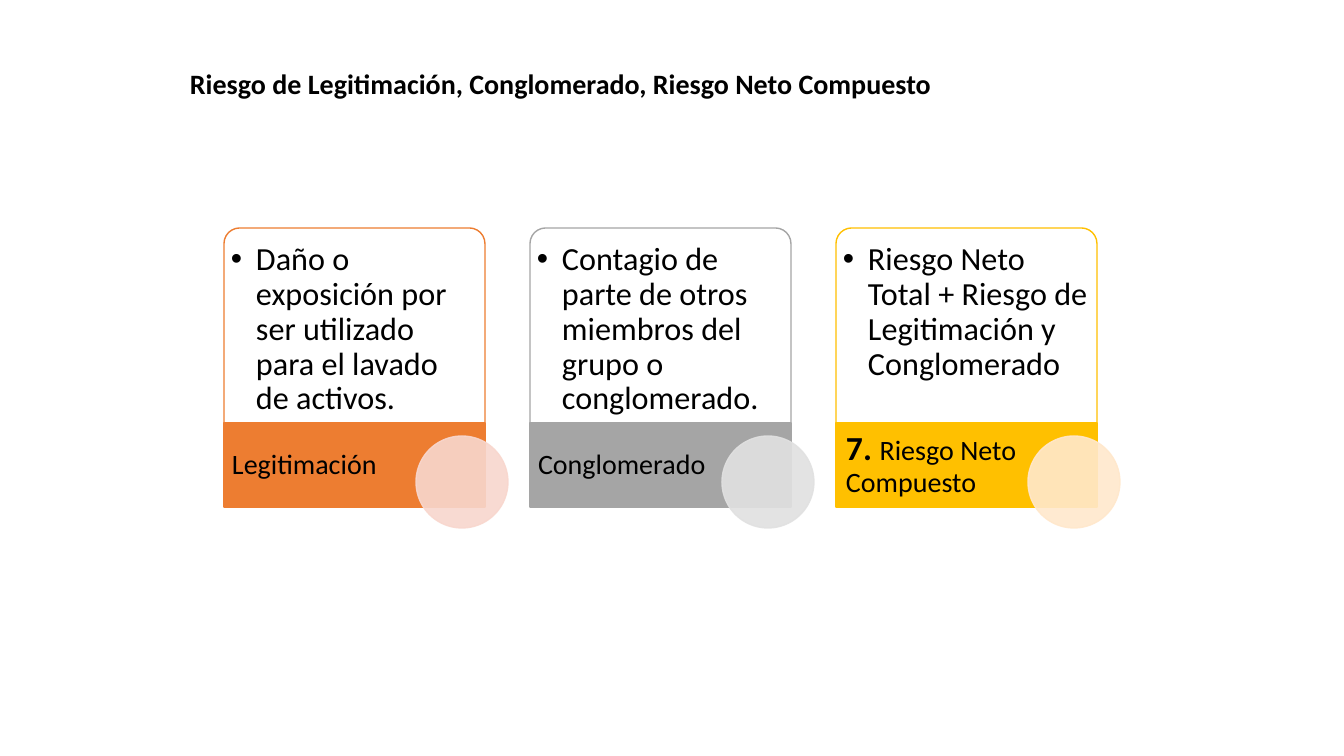
import pptx
import pptx.util
import pptx.dml.color
import pptx.enum.shapes
import pptx.enum.text
import pptx.oxml.ns
import lxml.etree

EMU_PER_PX = 914400 / 100.8
SHAPE = pptx.enum.shapes.MSO_SHAPE
ANCHOR = pptx.enum.text.MSO_ANCHOR
BLACK = "000000"


def px(n):
    return pptx.util.Emu(round(n * EMU_PER_PX))


def color(value):
    return pptx.dml.color.RGBColor.from_string(value)


def add_xml(parent, tag, **attrs):
    return lxml.etree.SubElement(parent, pptx.oxml.ns.qn(tag), **attrs)


def paint(fill, value, alpha=100):
    fill.solid()
    fill.fore_color.rgb = color(value)
    if alpha < 100:
        clr = fill._xPr.find(".//" + pptx.oxml.ns.qn("a:srgbClr"))
        add_xml(clr, "a:alpha", val=str(alpha * 1000))


def write(p, text, font="Calibri", size=20, bold=False, fg=BLACK):
    r = p.add_run()
    r.text = text
    r.font.name = font
    r.font.size = pptx.util.Pt(size)
    r.font.bold = bold
    r.font.color.rgb = color(fg)


class Deck:
    line_spacing = 0.9
    line_width = pptx.util.Pt(1)

    def __init__(self, width, height):
        self.prs = pptx.Presentation()
        self.prs.slide_width = px(width)
        self.prs.slide_height = px(height)
        self.s = self.prs.slides.add_slide(self.prs.slide_layouts[6])
        self.shapes = self.s.shapes

    def group(self):
        self.shapes = self.s.shapes.add_group_shape().shapes

    def shape(self, kind, x, y, w, h, fill, line, alpha=100, line_alpha=100, adj=()):
        sp = self.shapes.add_shape(kind, px(x), px(y), px(w), px(h))
        sp.shadow.inherit = False
        for i, value in enumerate(adj):
            sp.adjustments[i] = value
        paint(sp.fill, fill, alpha)
        paint(sp.line.fill, line, line_alpha)
        sp.line.width = self.line_width

    def text(self, x, y, w, h, runs, insets, anchor=ANCHOR.MIDDLE, indent=0):
        sp = self.shapes.add_textbox(px(x), px(y), px(w), px(h))
        tf = sp.text_frame
        tf.word_wrap = True
        tf.vertical_anchor = anchor
        tf.margin_left, tf.margin_top, tf.margin_right, tf.margin_bottom = map(px, insets)
        p = tf.paragraphs[0]
        p.line_spacing = self.line_spacing
        if indent:
            pPr = p._p.get_or_add_pPr()
            pPr.set("marL", str(px(indent)))
            pPr.set("indent", str(-px(indent)))
            add_xml(pPr, "a:buFont", typeface="Arial")
            add_xml(pPr, "a:buChar", char="•")
        for text, style in runs:
            write(p, text, **style)

    def card(self, x, body, label, accent, tint, label_inset):
        self.shape(SHAPE.ROUND_2_SAME_RECTANGLE, x, 228, 261, 195, "FFFFFF", accent,
                   alpha=90, adj=(0.08, 0))
        self.text(x + 4, 233, 252, 190, [(body, {"size": 23})], (3, 10, 3, 3),
                  anchor=ANCHOR.TOP, indent=25)
        self.shape(SHAPE.RECTANGLE, x, 423, 261, 84, accent, accent)
        self.text(x, 423, 184, 84, label, (label_inset, 0, 3, 0))
        self.shape(SHAPE.OVAL, x + 192, 436, 92, 92, tint, tint, alpha=90, line_alpha=90)


def main():
    deck = Deck(1344, 756)
    title = "Riesgo de Legitimación, Conglomerado, Riesgo Neto Compuesto"
    deck.text(180, 67, 1105, 36, [(title, {"bold": True})], (10, 5, 10, 5))
    cards = [
        ("Daño o exposición por ser utilizado para el lavado de activos.",
         [("Legitimación", {})], "ED7D31", "F8D7CE", 8),
        ("Contagio de parte de otros miembros del grupo o conglomerado.",
         [("Conglomerado", {})], "A5A5A5", "E1E1E1", 8),
        ("Riesgo Neto Total + Riesgo de Legitimación y Conglomerado",
         [("7. ", {"size": 24, "bold": True}), ("Riesgo Neto Compuesto", {})],
         "FFC000", "FFE8CC", 10),
    ]
    deck.group()
    for i, card in enumerate(cards):
        deck.card(224 + 306 * i, *card)
    deck.prs.save("out.pptx")


if __name__ == "__main__":
    main()
